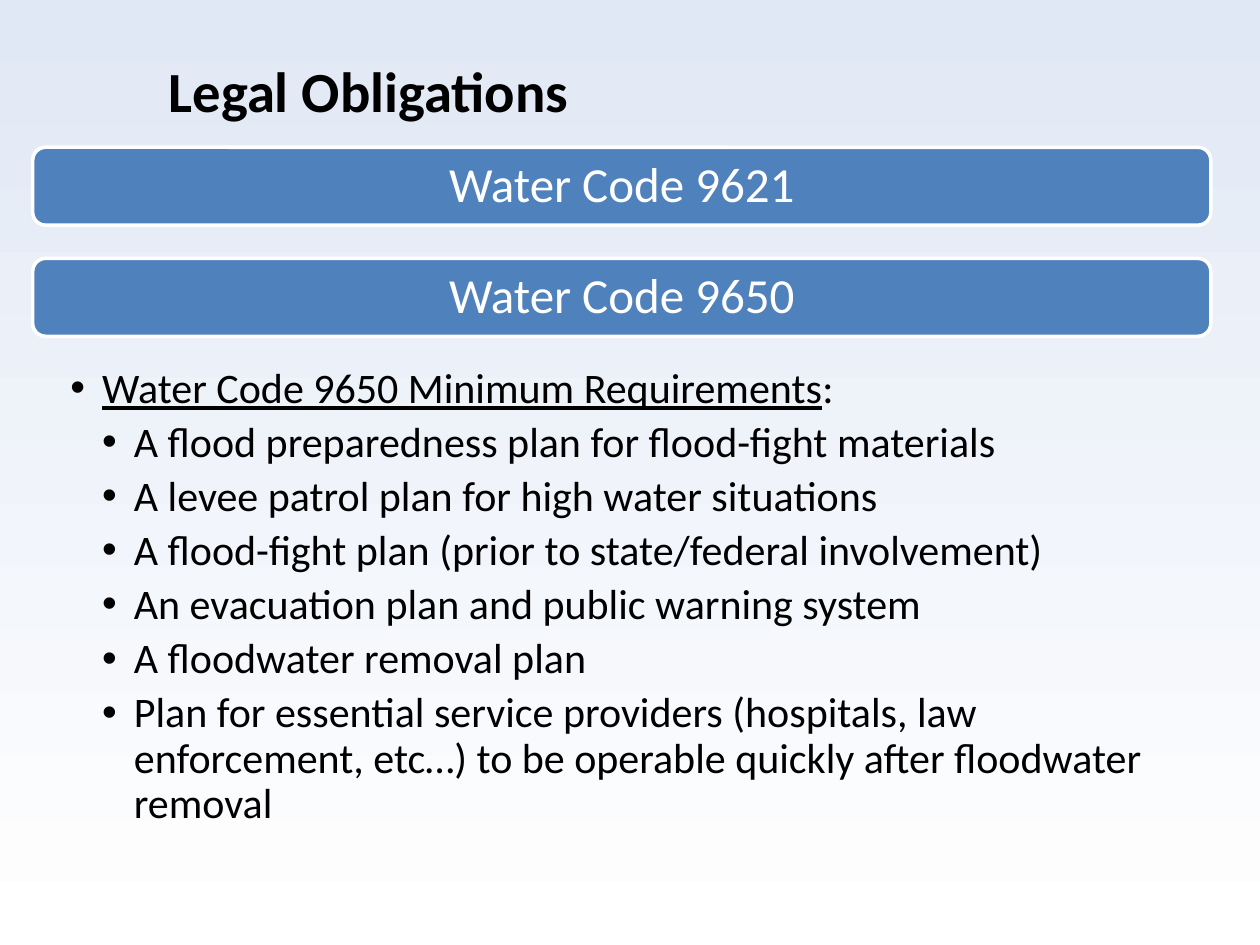
from pptx import Presentation
from pptx.dml.color import RGBColor
from pptx.enum.shapes import MSO_SHAPE
from pptx.enum.text import MSO_ANCHOR, PP_ALIGN
from pptx.oxml.ns import qn
from pptx.util import Cm, Pt
from lxml.etree import SubElement

LEFT, WIDTH = Cm(0.66), Cm(23.75)
CODES = ["Water Code 9621", "Water Code 9650"]
PLANS = [
    "A flood preparedness plan for flood-fight materials",
    "A levee patrol plan for high water situations",
    "A flood-fight plan (prior to state/federal involvement)",
    "An evacuation plan and public warning system",
    "A floodwater removal plan",
    "Plan for essential service providers (hospitals, law enforcement, "
    "etc…) to be operable quickly after floodwater removal",
]


def color(code):
    return RGBColor.from_string(code)


def style(para, size, code, bold=False):
    font = para.font
    font.name, font.size, font.bold = "Calibri", Pt(size), bold
    font.color.rgb = color(code)


def paint(slide, top, bottom):
    fill = slide.background.fill
    fill.gradient()
    fill.gradient_angle = 270
    for stop, code in zip(fill.gradient_stops, (top, bottom)):
        stop.color.rgb = color(code)


def add_title(slide, text):
    box = slide.shapes.add_textbox(Cm(3.15), Cm(1.07), Cm(22.25), Cm(1.47))
    frame = box.text_frame
    frame.word_wrap = True
    frame.vertical_anchor = MSO_ANCHOR.MIDDLE
    para = frame.paragraphs[0]
    para.text = text
    style(para, 32.4, "000000", True)


def add_banner(slide, top, text):
    shape = slide.shapes.add_shape(
        MSO_SHAPE.ROUNDED_RECTANGLE, LEFT, top, WIDTH, Cm(1.57))
    shape.shadow.inherit = False
    shape.fill.solid()
    shape.fill.fore_color.rgb = color("4F81BD")
    shape.line.color.rgb = color("FFFFFF")
    shape.line.width = Pt(2)
    frame = shape.text_frame
    frame.vertical_anchor = MSO_ANCHOR.MIDDLE
    para = frame.paragraphs[0]
    para.text = text
    para.alignment = PP_ALIGN.CENTER
    para.line_spacing = 0.9
    style(para, 28, "FFFFFF")


def set_bullet(para, level):
    para.level = level
    para.line_spacing = 0.9
    para.space_after = Pt(5)
    style(para, 24, "000000")
    props = para._p.get_or_add_pPr()
    step = Cm(0.64)
    props.set("marL", str(step * level))
    props.set("indent", str(-step))
    bullet = props.makeelement(qn("a:buChar"), {"char": "•"})
    props.find(qn("a:defRPr")).addprevious(bullet)
    SubElement(props, qn("a:buFont"), typeface="Arial")
    bullet.addprevious(props.find(qn("a:buFont")))


def add_list(slide, head, items):
    box = slide.shapes.add_textbox(LEFT, Cm(7.32), WIDTH, Cm(9.17))
    frame = box.text_frame
    frame.word_wrap = True
    frame.margin_left, frame.margin_right = Cm(0.76), Cm(0.48)
    frame.margin_top = frame.margin_bottom = Cm(0.08)
    para = frame.paragraphs[0]
    run = para.add_run()
    run.text = head
    run.font.underline = True
    para.add_run().text = ":"
    set_bullet(para, 1)
    for item in items:
        para = frame.add_paragraph()
        para.text = item
        set_bullet(para, 2)


def main():
    deck = Presentation()
    deck.slide_width, deck.slide_height = Cm(25.4), Cm(19.05)
    slide = deck.slides.add_slide(deck.slide_layouts[6])
    paint(slide, "E1E8F5", "FFFFFF")
    add_title(slide, "Legal Obligations")
    for row, code in enumerate(CODES):
        add_banner(slide, Cm(2.97 + 2.24 * row), code)
    add_list(slide, "Water Code 9650 Minimum Requirements", PLANS)
    deck.save("out.pptx")


if __name__ == "__main__":
    main()
